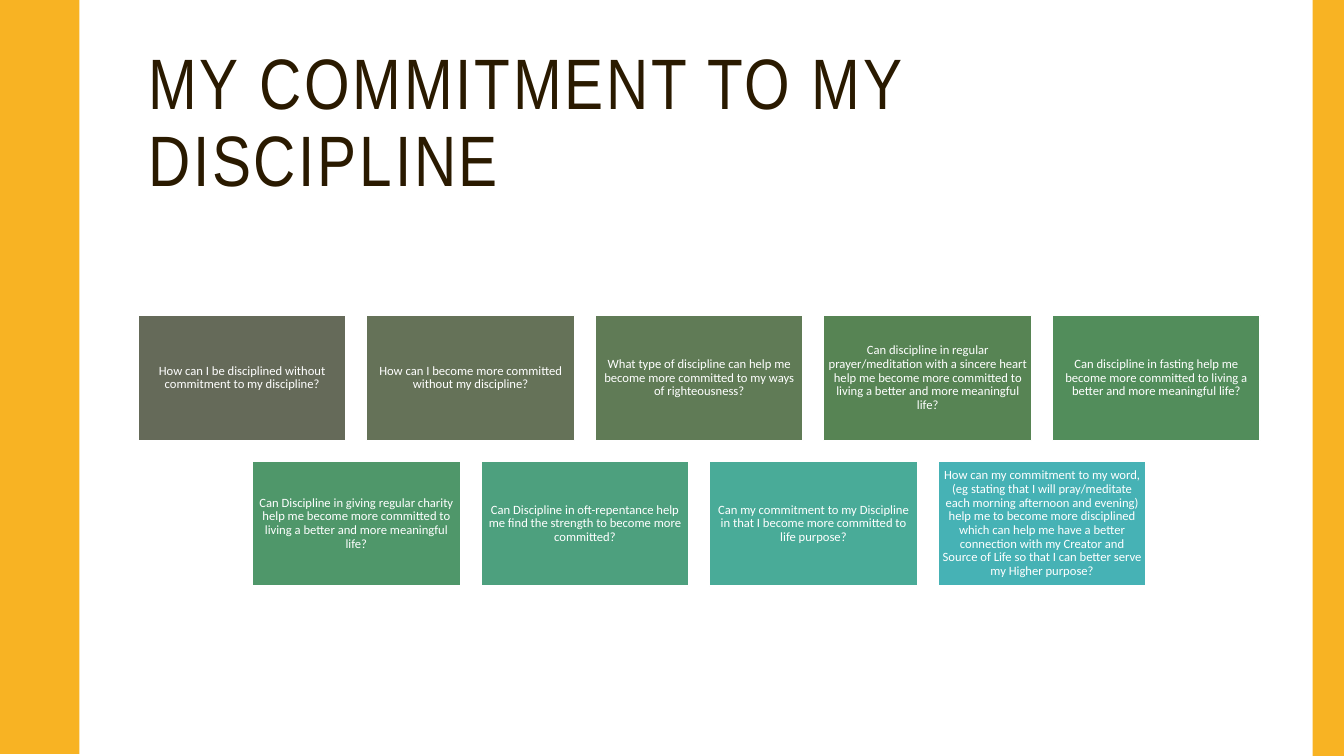
from pptx import Presentation
from pptx.dml.color import RGBColor
from pptx.enum.shapes import MSO_SHAPE
from pptx.enum.text import MSO_ANCHOR, MSO_AUTO_SIZE, PP_ALIGN
from pptx.util import Cm, Pt

# Content
TITLE = "MY COMMITMENT TO MY DISCIPLINE"
QUESTION_ROWS = [
    [
        ("How can I be disciplined without commitment to my discipline?",
         RGBColor(0x65, 0x6A, 0x59)),
        ("How can I become more committed without my discipline?",
         RGBColor(0x65, 0x72, 0x58)),
        ("What type of discipline can help me become more committed to my ways "
         "of righteousness?", RGBColor(0x60, 0x7B, 0x56)),
        ("Can discipline in regular prayer/meditation with a sincere heart help me "
         "become more committed to living a better and more meaningful life?",
         RGBColor(0x57, 0x84, 0x54)),
        ("Can discipline in fasting help me become more committed to living a "
         "better and more meaningful life?", RGBColor(0x52, 0x8D, 0x5B)),
    ],
    [
        ("Can Discipline in giving regular charity help me become more committed "
         "to living a better and more meaningful life?", RGBColor(0x4F, 0x97, 0x6A)),
        ("Can Discipline in oft-repentance help me find the strength to become "
         "more committed?", RGBColor(0x4D, 0xA0, 0x7E)),
        ("Can my commitment to my Discipline in that I become more committed to "
         "life purpose?", RGBColor(0x49, 0xAB, 0x98)),
        ("How can my commitment to my word, (eg stating that I will pray/meditate "
         "each morning afternoon and evening) help me to become more disciplined "
         "which can help me have a better connection with my Creator and Source of "
         "Life so that I can better serve my Higher purpose?",
         RGBColor(0x46, 0xB2, 0xB5)),
    ],
]

# Colours and text formats
WHITE = RGBColor(0xFF, 0xFF, 0xFF)
BROWN = RGBColor(0x2A, 0x1A, 0x00)
YELLOW = RGBColor(0xF8, 0xB3, 0x23)
TITLE_FONT = {"name": "Arial Narrow", "size": Pt(51)}
QUESTION_FONT = {"name": "Calibri", "size": Pt(9)}
TITLE_FRAME = {"word_wrap": True, "auto_size": MSO_AUTO_SIZE.NONE,
               "vertical_anchor": MSO_ANCHOR.MIDDLE}
MARGINS = ("margin_left", "margin_top", "margin_right", "margin_bottom")
QUESTION_FRAME = TITLE_FRAME | dict.fromkeys(MARGINS, Cm(0.1))

# Measures in centimetres
SLIDE_WIDTH, SLIDE_HEIGHT = 33.87, 19.05
STRIPE_WIDTH = 0.79
BOX_WIDTH, BOX_HEIGHT, GAP = 5.24, 3.15, 0.52
GRID_CENTRE, GRID_TOP = 17.62, 7.95
WAVE_PERIOD = 3.81
HALF_WAVE = [(1.98, 0), (1.98, 0.18), (2.01, 0.36), (2.03, 0.51), (2.06, 0.64),
             (2.11, 0.74), (2.16, 0.84), (2.21, 0.97), (2.26, 1.07), (2.31, 1.17),
             (2.36, 1.27), (2.41, 1.4), (2.44, 1.55), (2.46, 1.73)]


def apply_format(target, values):
    for name, value in values.items():
        setattr(target, name, value)


def paint(shape, colour):
    shape.shadow.inherit = False
    shape.fill.solid()
    shape.fill.fore_color.rgb = colour
    shape.line.fill.background()


def write(shape, text, frame_format, font_format, colour, alignment):
    frame = shape.text_frame
    apply_format(frame, frame_format)
    paragraph = frame.paragraphs[0]
    apply_format(paragraph, {"alignment": alignment, "line_spacing": 0.9})
    run = paragraph.add_run()
    run.text = text
    apply_format(run.font, font_format)
    run.font.color.rgb = colour
    return run


presentation = Presentation()
presentation.slide_width, presentation.slide_height = Cm(SLIDE_WIDTH), Cm(SLIDE_HEIGHT)
slide = presentation.slides.add_slide(presentation.slide_layouts[5])

# Title
title = slide.shapes.title
apply_format(title, {"left": Cm(3.48), "top": Cm(1.07),
                     "width": Cm(28.27), "height": Cm(4.14)})
title_run = write(title, TITLE, TITLE_FRAME, TITLE_FONT, BROWN, PP_ALIGN.LEFT)
title_run.font._element.set("spc", "200")

# Wavy left edge: each wave is a half wave and its mirror
one_wave = HALF_WAVE + [(2.46, WAVE_PERIOD / 2)] + [
    (x, WAVE_PERIOD - y) for x, y in reversed(HALF_WAVE)]
wave_count = round(SLIDE_HEIGHT / WAVE_PERIOD)
edge = [(x, y + wave * WAVE_PERIOD) for wave in range(wave_count) for x, y in one_wave]
builder = slide.shapes.build_freeform(0, 0, scale=Cm(1))
builder.add_line_segments(edge + [(0, SLIDE_HEIGHT)], close=True)
paint(builder.convert_to_shape(), YELLOW)

# Right stripe
stripe = slide.shapes.add_shape(MSO_SHAPE.RECTANGLE, Cm(SLIDE_WIDTH - STRIPE_WIDTH), 0,
                                Cm(STRIPE_WIDTH), Cm(SLIDE_HEIGHT))
paint(stripe, YELLOW)

# Question boxes, each row centred
for row, questions in enumerate(QUESTION_ROWS):
    row_width = len(questions) * (BOX_WIDTH + GAP) - GAP
    top = GRID_TOP + row * (BOX_HEIGHT + GAP)
    for column, (question, colour) in enumerate(questions):
        left = GRID_CENTRE - row_width / 2 + column * (BOX_WIDTH + GAP)
        box = slide.shapes.add_shape(MSO_SHAPE.RECTANGLE, Cm(left), Cm(top),
                                     Cm(BOX_WIDTH), Cm(BOX_HEIGHT))
        paint(box, colour)
        box.line.color.rgb = WHITE
        box.line.width = Pt(1)
        write(box, question, QUESTION_FRAME, QUESTION_FONT, WHITE, PP_ALIGN.CENTER)

presentation.save("out.pptx")
